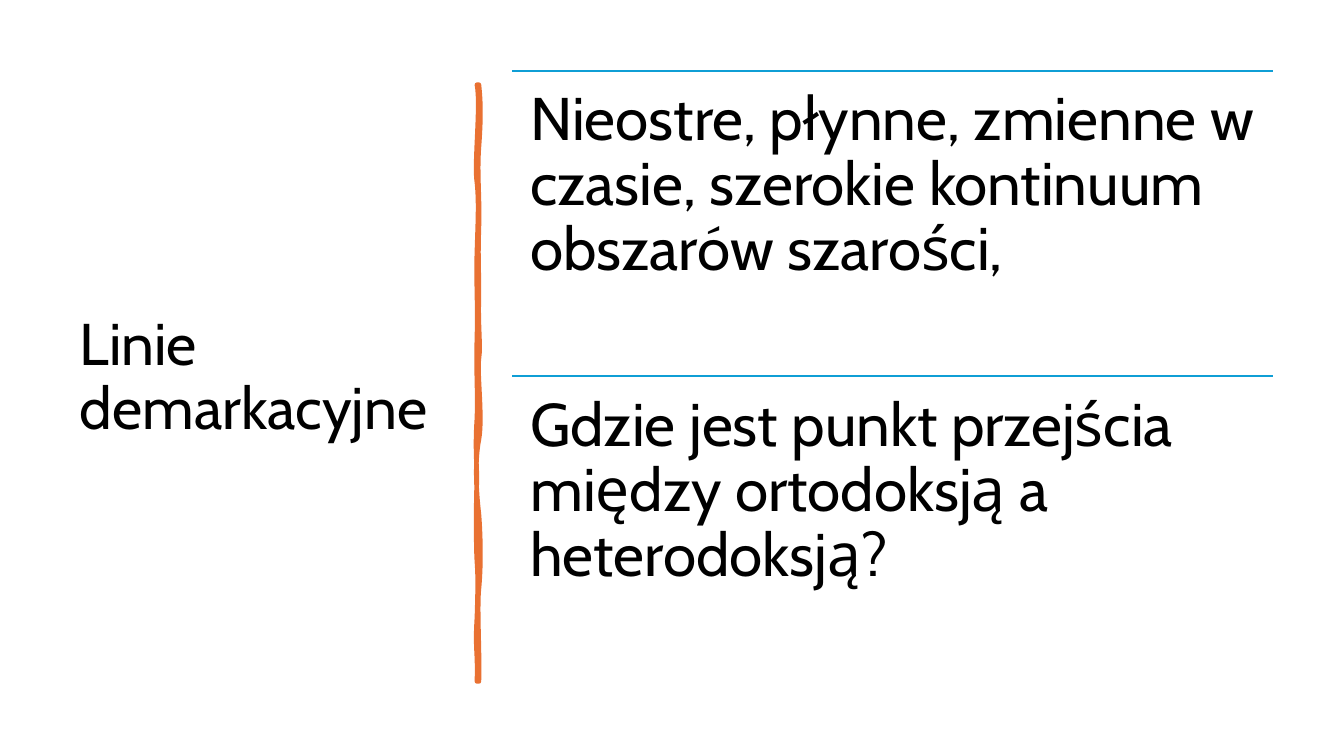
from lxml import etree
from pptx import Presentation
from pptx.dml.color import RGBColor
from pptx.enum import shapes, text
from pptx.oxml.ns import qn
from pptx.util import Inches, Pt

FONT, BLACK, BLUE, ORANGE = "Cabin", "000000", "0F9ED5", "E97132"
TITLE = "Linie demarkacyjne"
POINTS = [
    "Nieostre, płynne, zmienne w czasie, szerokie kontinuum obszarów szarości,",
    "Gdzie jest punkt przejścia między ortodoksją a heterodoksją?",
]
LEFT, TOP, WIDTH, ROW = 5.08, 0.7, 7.55, 3.03

# Hand-drawn bar: start point, then two controls and an end for each curve
START = (4.75, 0.84)
CURVES = [
    ((4.77, 1.02), (4.77, 1.19), (4.75, 1.46)),
    ((4.73, 1.73), (4.76, 1.95), (4.75, 2.26)),
    ((4.74, 2.57), (4.75, 2.62), (4.75, 2.94)),
    ((4.74, 3.25), (4.77, 3.42), (4.75, 3.56)),
    ((4.73, 3.7), (4.79, 4.14), (4.75, 4.36)),
    ((4.71, 4.57), (4.72, 4.84), (4.75, 5.1)),
    ((4.77, 5.36), (4.77, 5.64), (4.75, 5.84)),
    ((4.73, 6.03), (4.76, 6.5), (4.75, 6.76)),
    ((4.74, 6.76), (4.73, 6.76), (4.73, 6.76)),
    ((4.74, 6.46), (4.71, 6.44), (4.73, 6.13)),
    ((4.74, 5.83), (4.74, 5.7), (4.73, 5.57)),
    ((4.72, 5.44), (4.72, 4.95), (4.73, 4.77)),
    ((4.73, 4.59), (4.71, 4.45), (4.73, 4.15)),
    ((4.74, 3.86), (4.72, 3.73), (4.73, 3.35)),
    ((4.74, 2.98), (4.72, 2.81), (4.73, 2.5)),
    ((4.74, 2.18), (4.75, 2), (4.73, 1.81)),
    ((4.7, 1.63), (4.77, 1.04), (4.73, 0.84)),
]


def color(code):
    return RGBColor.from_string(code)


def write(frame, words, size):
    frame.word_wrap = True
    para = frame.paragraphs[0]
    para.alignment = text.PP_ALIGN.LEFT
    para.line_spacing = 0.9
    run = para.add_run()
    run.text = words
    run.font.name, run.font.size = FONT, Pt(size)
    run.font.color.rgb = color(BLACK)


def bend(shape, curves):
    """Turn the straight sides of a freeform into cubic curves."""
    sides = list(shape._element.iter(qn("a:lnTo")))
    for side, curve in zip(sides, curves):
        side.tag = qn("a:cubicBezTo")
        side.remove(side[0])
        for x, y in curve:
            etree.SubElement(side, qn("a:pt"),
                             x=str(Inches(x) - shape.left),
                             y=str(Inches(y) - shape.top))


deck = Presentation()
deck.slide_width, deck.slide_height = Inches(13.33), Inches(7.5)
slide = deck.slides.add_slide(deck.slide_layouts[5])

title = slide.shapes.title
title.left, title.top = Inches(0.69), Inches(0.7)
title.width, title.height = Inches(3.74), Inches(6.11)
title.text_frame.vertical_anchor = text.MSO_ANCHOR.MIDDLE
write(title.text_frame, TITLE, 42)

pen = slide.shapes.build_freeform(*map(Inches, START))
ends = [tuple(map(Inches, end)) for _, _, end in CURVES]
pen.add_line_segments(ends, close=True)
bar = pen.convert_to_shape()
bend(bar, CURVES)
bar.shadow.inherit = False
bar.fill.solid()
bar.fill.fore_color.rgb = color(ORANGE)
bar.line.color.rgb = color(ORANGE)
bar.line.width = Pt(3.25)
etree.SubElement(bar._element.spPr.find(qn("a:ln")), qn("a:round"))

for row, words in enumerate(POINTS):
    y = TOP + row * ROW
    rule = slide.shapes.add_connector(
        shapes.MSO_CONNECTOR.STRAIGHT,
        Inches(LEFT), Inches(y), Inches(LEFT + WIDTH), Inches(y))
    rule.line.color.rgb = color(BLUE)
    rule.line.width = Pt(1.5)
    etree.SubElement(rule._element.spPr, qn("a:effectLst"))

    box = slide.shapes.add_textbox(
        Inches(LEFT), Inches(y), Inches(WIDTH), Inches(ROW))
    frame = box.text_frame
    frame.margin_left = frame.margin_right = Inches(0.18)
    frame.margin_top = frame.margin_bottom = Inches(0.18)
    write(frame, words, 43)

deck.save("out.pptx")
